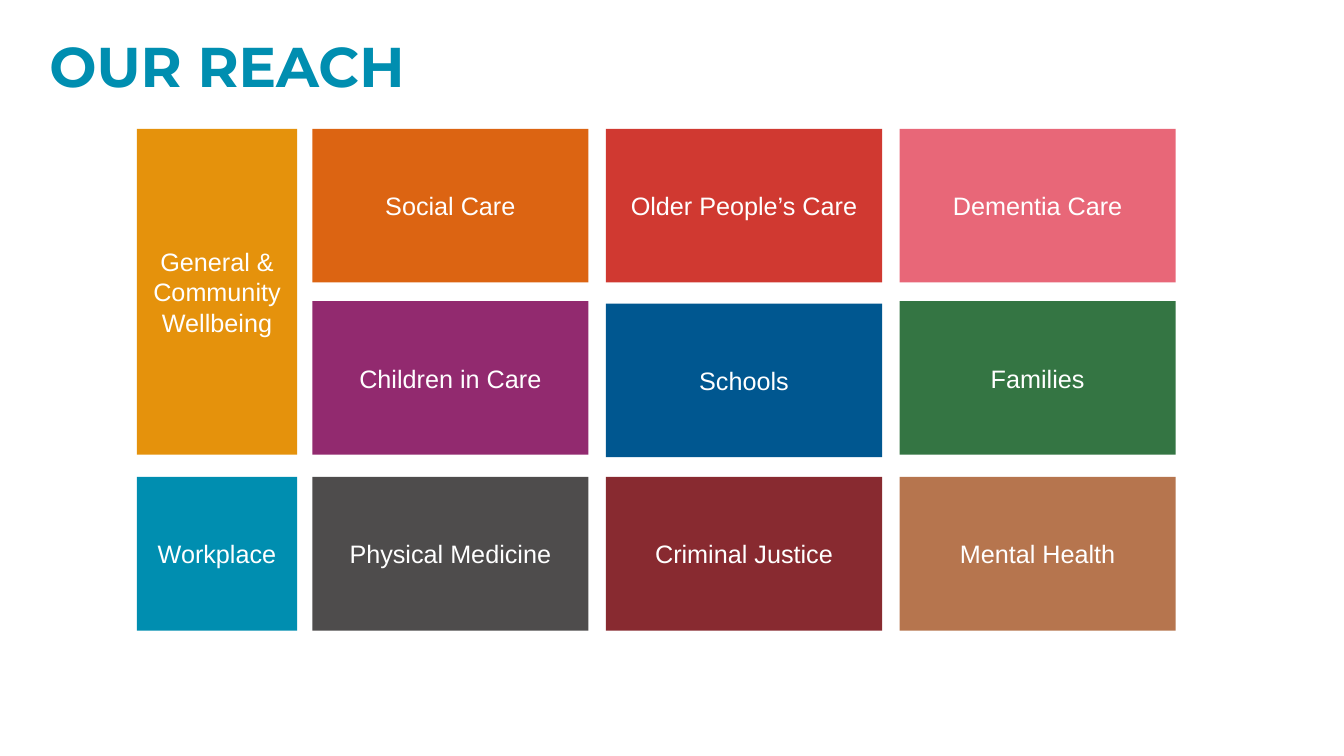
from dataclasses import dataclass

from pptx import Presentation
from pptx.dml.color import RGBColor
from pptx.enum.shapes import MSO_SHAPE
from pptx.enum.text import MSO_ANCHOR, PP_ALIGN
from pptx.util import Cm, Pt

RECTANGLE = MSO_SHAPE.RECTANGLE
MIDDLE, TOP = MSO_ANCHOR.MIDDLE, MSO_ANCHOR.TOP
CENTER, LEFT = PP_ALIGN.CENTER, PP_ALIGN.LEFT


@dataclass(frozen=True)
class Theme:
    teal: str = "008EB0"
    amber: str = "E5920C"
    orange: str = "DC6412"
    red: str = "D03931"
    pink: str = "E86778"
    purple: str = "922A6F"
    blue: str = "005790"
    green: str = "347543"
    grey: str = "4E4C4C"
    maroon: str = "882A30"
    tan: str = "B6754E"
    white: str = "FFFFFF"
    title_font: str = "Montserrat"
    body_font: str = "Arial"
    title_size: int = 40
    body_size: int = 18


theme = Theme()


def style_text(frame, font_name, size, color, alignment, anchor):
    frame.word_wrap = True
    frame.vertical_anchor = anchor
    for para in frame.paragraphs:
        para.alignment = alignment
        para.line_spacing = 1.0
        para.space_before = Pt(0)
        para.font.name = font_name
        para.font.size = Pt(size)
        para.font.color.rgb = RGBColor.from_string(color)


def add_tile(page, label, color, left, top, width, height):
    tile = page.shapes.add_shape(RECTANGLE, Cm(left), Cm(top), Cm(width), Cm(height))
    tile.shadow.inherit = False
    tile.fill.solid()
    tile.fill.fore_color.rgb = RGBColor.from_string(color)
    tile.line.fill.background()
    tile.text_frame.text = label
    style_text(tile.text_frame, theme.body_font, theme.body_size, theme.white, CENTER, MIDDLE)
    return tile


deck = Presentation()
deck.slide_width, deck.slide_height = Cm(33.87), Cm(19.05)
page = deck.slides.add_slide(deck.slide_layouts[5])

title = page.shapes.title
title.left, title.top, title.width, title.height = Cm(0.99), Cm(0.66), Cm(19.89), Cm(1.96)
title.text_frame.text = "OUR REACH"
style_text(title.text_frame, theme.title_font, theme.title_size, theme.teal, LEFT, TOP)
title.text_frame.paragraphs[0].font.bold = True

side_left, side_width = 3.45, 4.04
grid_left, column_pitch, tile_width, tile_height = 7.87, 7.4, 6.96, 3.87
row_tops = [3.25, 7.59, 12.02]
schools_drop = 0.06

sectors = [
    [("Social Care", theme.orange), ("Older People’s Care", theme.red), ("Dementia Care", theme.pink)],
    [("Children in Care", theme.purple), ("Schools", theme.blue), ("Families", theme.green)],
    [("Physical Medicine", theme.grey), ("Criminal Justice", theme.maroon), ("Mental Health", theme.tan)],
]

for top, row in zip(row_tops, sectors):
    for column, (label, color) in enumerate(row):
        drop = schools_drop if label == "Schools" else 0
        left = grid_left + column * column_pitch
        add_tile(page, label, color, left, top + drop, tile_width, tile_height)

community_height = row_tops[1] + tile_height - row_tops[0]
add_tile(page, "General & Community\nWellbeing", theme.amber,
         side_left, row_tops[0], side_width, community_height)
add_tile(page, "Workplace", theme.teal, side_left, row_tops[2], side_width, tile_height)

deck.save("out.pptx")
